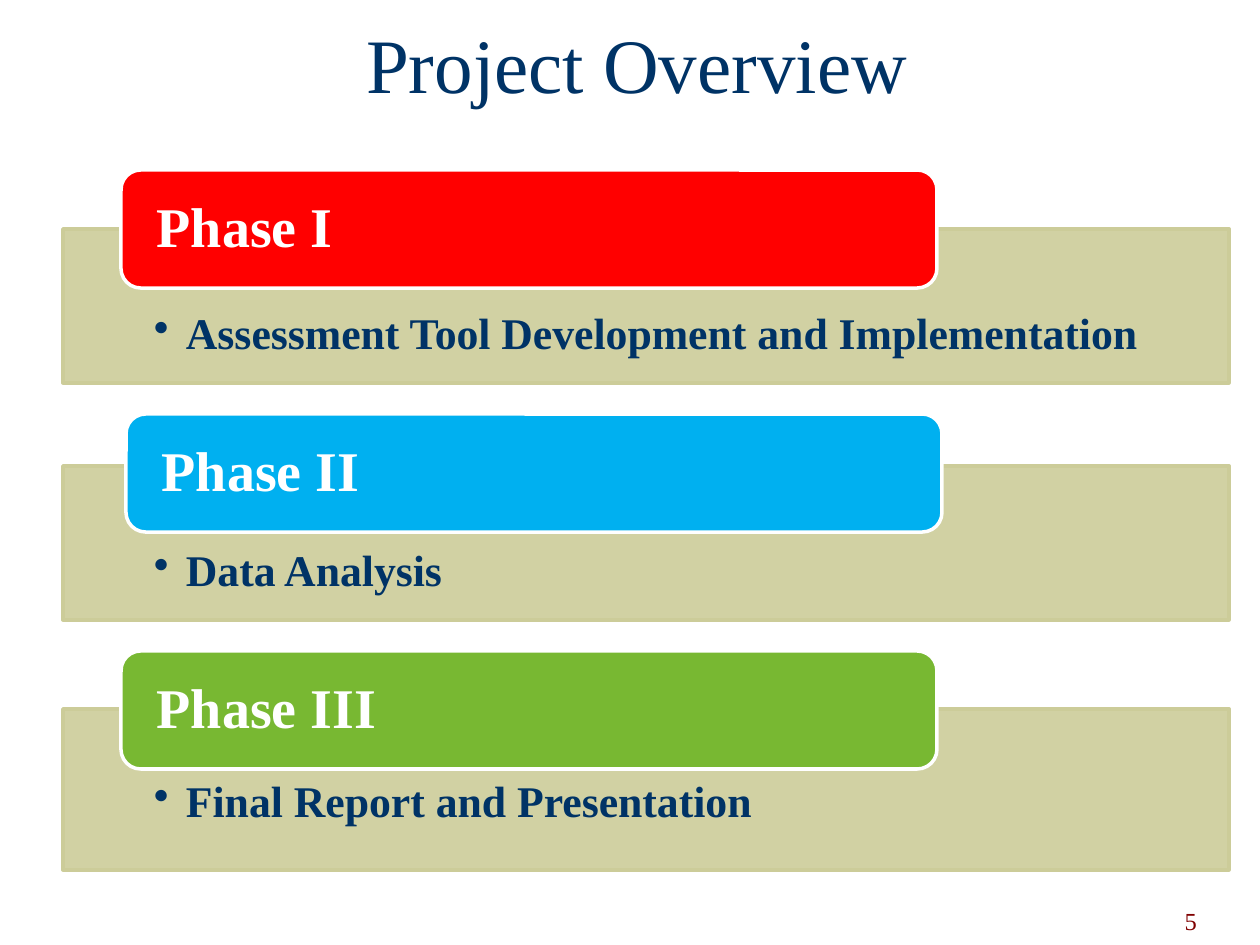
from lxml import etree
from pptx import Presentation
from pptx.dml.color import RGBColor
from pptx.enum.shapes import MSO_SHAPE
from pptx.enum.text import MSO_ANCHOR, PP_ALIGN
from pptx.oxml.ns import qn
from pptx.util import Emu, Pt

PX = 914400 // 126
FONT = "Times New Roman"
NAVY, MAROON, WHITE, KHAKI = "003366", "800000", "FFFFFF", "CCCC99"
RECTANGLE, ROUNDED = MSO_SHAPE.RECTANGLE, MSO_SHAPE.ROUNDED_RECTANGLE
TOP, MIDDLE, BOTTOM = MSO_ANCHOR.TOP, MSO_ANCHOR.MIDDLE, MSO_ANCHOR.BOTTOM
LEFT, CENTER, RIGHT = PP_ALIGN.LEFT, PP_ALIGN.CENTER, PP_ALIGN.RIGHT

# Phase name, task, label colour, label left and top, bar top and height,
# bar text anchor and top and bottom insets
PHASES = [
    ("Phase I", "Assessment Tool Development and Implementation", "FF0000",
     (121, 170), (229, 154), (TOP, 83, 24)),
    ("Phase II", "Data Analysis", "00B0F0",
     (126, 414), (466, 154), (TOP, 83, 24)),
    ("Phase III", "Final Report and Presentation", "78B832",
     (121, 651), (709, 161), (MIDDLE, 72, 44)),
]


def px(value):
    return Emu(value * PX)


def color(hex_text):
    return RGBColor.from_string(hex_text)


def write(shape, text, size, hex_text, align, anchor, insets,
          bold=False, line_spacing=None):
    """Fill a shape with one paragraph; insets are left, top, right, bottom."""
    frame = shape.text_frame
    frame.word_wrap = True
    frame.vertical_anchor = anchor
    (frame.margin_left, frame.margin_top,
     frame.margin_right, frame.margin_bottom) = map(px, insets)
    paragraph = frame.paragraphs[0]
    paragraph.alignment = align
    paragraph.line_spacing = line_spacing
    run = paragraph.add_run()
    run.text = text
    run.font.name = FONT
    run.font.size = Pt(size)
    run.font.bold = bold
    run.font.color.rgb = color(hex_text)
    return paragraph


def add_box(slide, kind, box, fill, line):
    shape = slide.shapes.add_shape(kind, *map(px, box))
    shape.shadow.inherit = False
    shape.fill.solid()
    shape.fill.fore_color.rgb = color(fill)
    shape.line.color.rgb = color(line)
    shape.line.width = Pt(2)
    return shape


def set_opacity(shape, percent):
    fill_color = shape.fill._xPr.find(qn("a:solidFill"))[0]
    etree.SubElement(fill_color, qn("a:alpha"), val=str(percent * 1000))


def add_bullet(paragraph, indent):
    properties = paragraph._p.get_or_add_pPr()
    properties.set("marL", str(px(indent)))
    properties.set("indent", str(-px(indent)))
    etree.SubElement(properties, qn("a:buChar"), char="•")


def add_text(slide, box, *args, **options):
    write(slide.shapes.add_textbox(*map(px, box)), *args, **options)


def add_phase(slide, name, task, fill, label_at, bar_span, bar_text):
    # Bar with the task
    bar_top, bar_height = bar_span
    anchor, inset_top, inset_bottom = bar_text
    bar = add_box(slide, RECTANGLE, (63, bar_top, 1166, bar_height), KHAKI, KHAKI)
    set_opacity(bar, 90)
    paragraph = write(bar, task, 25, NAVY, LEFT, anchor,
                      (91, inset_top, 60, inset_bottom),
                      bold=True, line_spacing=0.9)
    add_bullet(paragraph, 32)

    # Label overlapping the bar
    label = add_box(slide, ROUNDED, (*label_at, 816, 118), fill, WHITE)
    write(label, name, 32, WHITE, LEFT, MIDDLE, (30, 0, 30, 0),
          bold=True, line_spacing=0.9)


def main():
    presentation = Presentation()
    presentation.slide_width, presentation.slide_height = px(1260), px(945)
    slide = presentation.slides.add_slide(presentation.slide_layouts[6])

    # Slide number and title
    add_text(slide, (908, 878, 302, 63), "5", 14, MAROON, RIGHT, BOTTOM,
             (13, 6, 13, 6))
    add_text(slide, (242, 0, 809, 140), "Project Overview ", 44, NAVY, CENTER,
             MIDDLE, (13, 6, 13, 6), line_spacing=0.85)

    # Phases
    for phase in PHASES:
        add_phase(slide, *phase)

    presentation.save("out.pptx")


if __name__ == "__main__":
    main()
